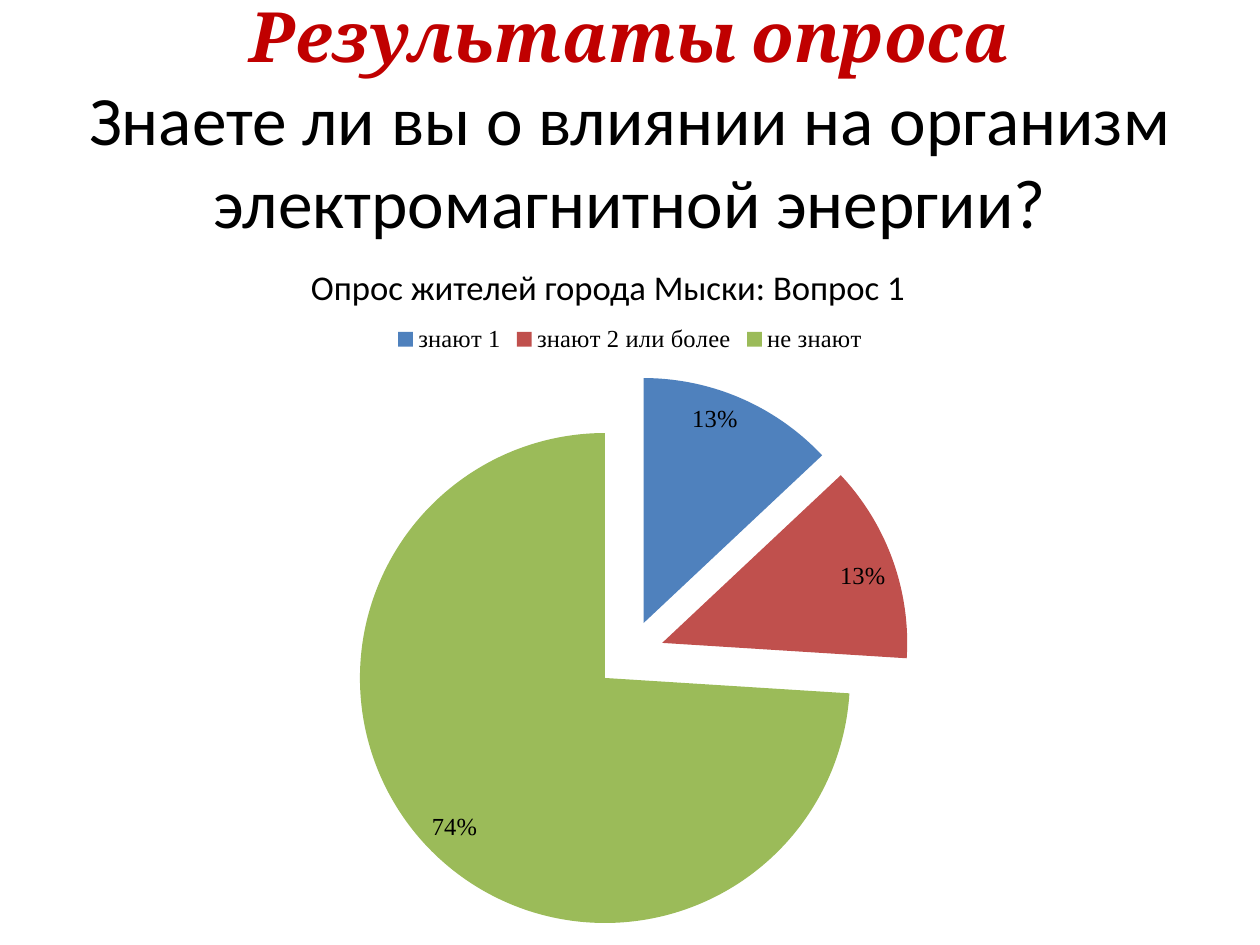
from pptx import Presentation
from pptx import util as u
from pptx.chart import data as chart_data
from pptx.dml.color import RGBColor
from pptx.enum import chart as charts, text
from pptx.oxml import parse_xml
from pptx.oxml.ns import nsdecls

# Content
TITLE = [
    ("Результаты опроса", dict(font="Cambria", color="C00000", bold=True, italic=True)),
    ("Знаете ли вы о влиянии на организм электромагнитной энергии?", {}),
]
SUBTITLE = "Опрос жителей города Мыски: Вопрос 1"
ANSWERS = [
    ("знают 1", 13, "4F81BD"),
    ("знают 2 или более", 13, "C0504D"),
    ("не знают", 74, "9BBB59"),
]
EXPLOSION = 14


def rgb(value):
    return RGBColor.from_string(value)


def style(font, name="Calibri", size=14, color="000000", bold=False, italic=False):
    font.name, font.size = name, u.Pt(size)
    font.bold, font.italic = bold, italic
    font.color.rgb = rgb(color)


def add_text(frame, words, font="Calibri", size=39.6, color="000000",
             bold=False, italic=False, spacing=None):
    para = frame.paragraphs[0] if not frame.text else frame.add_paragraph()
    para.alignment = text.PP_ALIGN.CENTER
    if spacing:
        para.line_spacing = spacing
    span = para.add_run()
    span.text = words
    style(span.font, font, size, color, bold, italic)


def add_frame(page, left, top, width, height):
    box = page.shapes.add_textbox(*map(u.Inches, (left, top, width, height)))
    frame = box.text_frame
    frame.word_wrap = True
    frame.vertical_anchor = text.MSO_ANCHOR.MIDDLE
    return frame


deck = Presentation()
deck.slide_width, deck.slide_height = u.Inches(10), u.Inches(7.5)
page = deck.slides.add_slide(deck.slide_layouts[6])

# Pie chart of the answers
data = chart_data.CategoryChartData()
data.categories = [name for name, _, _ in ANSWERS]
data.add_series("Series 1", [value for _, value, _ in ANSWERS])
chart = page.shapes.add_chart(
    charts.XL_CHART_TYPE.PIE, *map(u.Inches, (0, 2.47, 10, 5.08)), data).chart
style(chart.font, size=10)
chart.has_title = False
chart.has_legend = True
chart.legend.position = charts.XL_LEGEND_POSITION.TOP
chart.legend.include_in_layout = False
style(chart.legend.font, "Times New Roman")

plot = chart.plots[0]
plot.vary_by_categories = True
series = plot.series[0]
for index, (_, _, color) in enumerate(ANSWERS):
    fill = series.points[index].format.fill
    fill.solid()
    fill.fore_color.rgb = rgb(color)

# Pull the slices apart
first_point = series.points[0].format and series._element.dPt_lst[0]
first_point.addprevious(parse_xml(f'<c:explosion {nsdecls("c")} val="{EXPLOSION}"/>'))

labels = series.data_labels
labels.show_percentage, labels.show_value = True, False
labels.number_format, labels.number_format_is_linked = "0%", False
labels.position = charts.XL_LABEL_POSITION.INSIDE_END
style(labels.font, "Times New Roman")

# Title and subtitle
frame = add_frame(page, 0, 0, 10, 1.87)
for words, look in TITLE:
    add_text(frame, words, **look)

frame = add_frame(page, 0.39, 1.56, 9, 1.25)
frame.margin_top, frame.margin_right = u.Inches(0.29), u.Inches(0.23)
add_text(frame, SUBTITLE, size=19.8, spacing=0.8)

deck.save("out.pptx")
